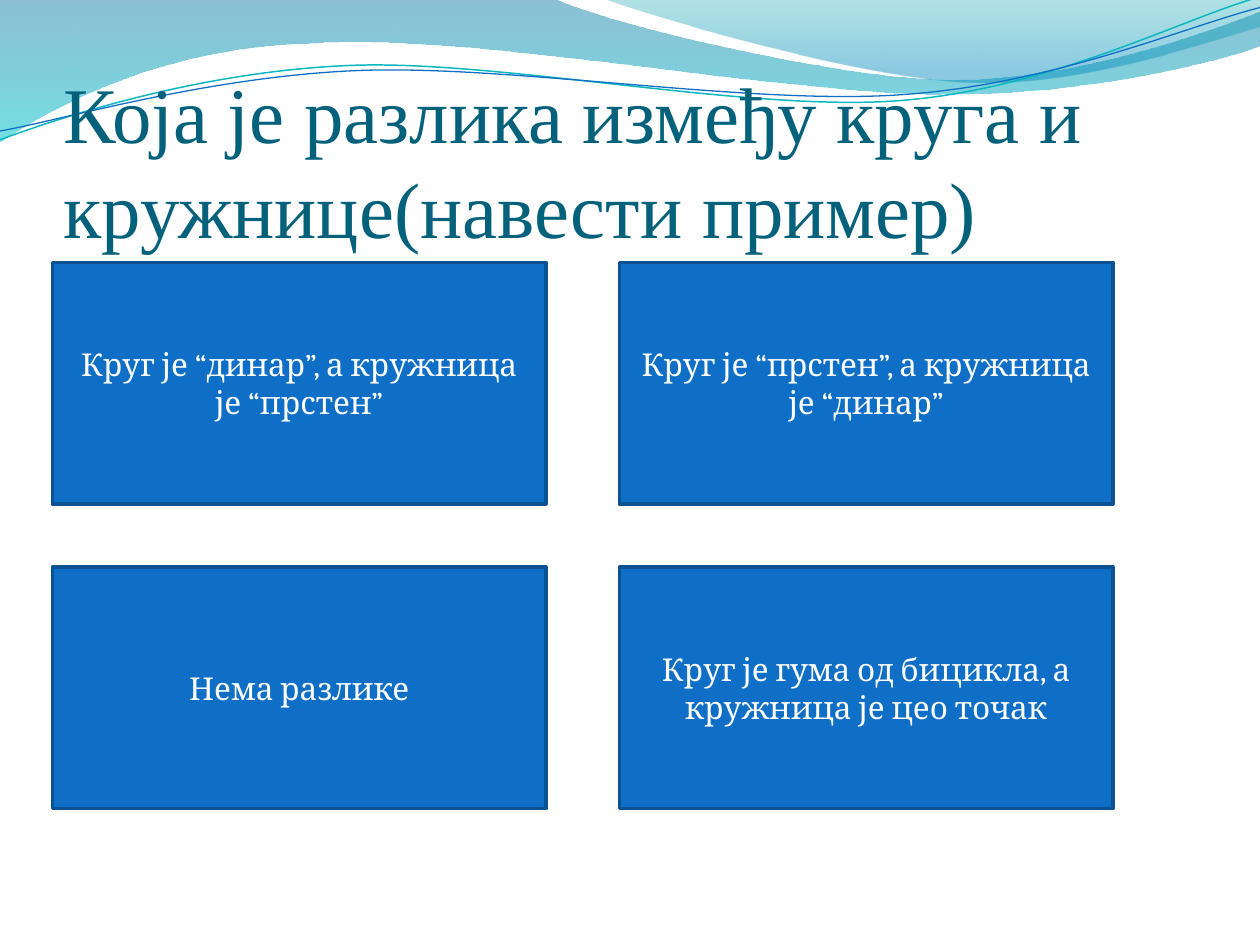
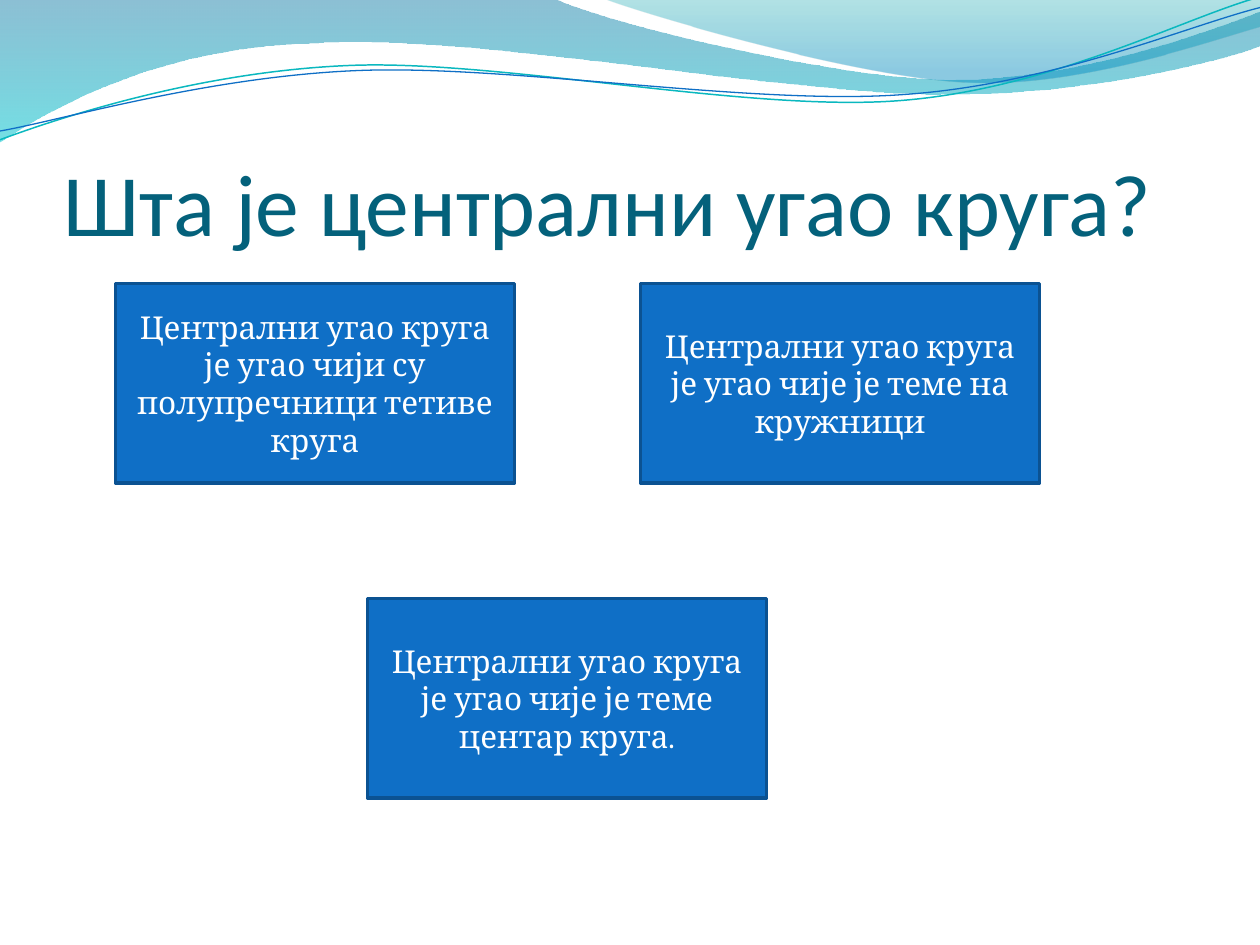
import pptx
import pptx.dml.color
import pptx.enum.shapes
import pptx.enum.text
import pptx.oxml
import pptx.oxml.ns
import pptx.util

Pt = pptx.util.Pt
RGBColor = pptx.dml.color.RGBColor
ALIGN = pptx.enum.text.PP_ALIGN
ANCHOR = pptx.enum.text.MSO_ANCHOR
qn = pptx.oxml.ns.qn
A_NAMESPACE = pptx.oxml.ns.nsdecls("a")

TITLE_TEAL = RGBColor(0x04, 0x61, 0x7B)
CARD_BLUE = RGBColor(0x0F, 0x6F, 0xC6)
CARD_EDGE = RGBColor(0x0B, 0x52, 0x92)
WHITE = RGBColor(0xFF, 0xFF, 0xFF)
WAVE_BLUE = RGBColor(0x00, 0x74, 0xA1)
WAVE_TURQUOISE = RGBColor(0x00, 0xC6, 0xCF)
CREST_GREEN = RGBColor(0x00, 0xA1, 0xA9)
CREST_BLUE = RGBColor(0x00, 0x8B, 0xBF)
STRAND_TEAL = RGBColor(0x0A, 0xB8, 0xBF)

SLIDE_BOX = (0, 0, 720, 540)
TITLE_BOX = (36.3, 55.2, 654, 90)
STRAND_ROTATION = 357.3

# Outlines in points: a pair is a line to a point, six numbers are a Bezier curve.
WAVE = [
    (0, 0), (316.8, -0.7),
    (342.7, 12.2, 478.1, 45.4, 545.8, 45.4),
    (614.2, 45.4, 689.8, 18.7, 720, 6.5),
    (720.7, 25.9),
    (707.8, 31.7, 626.4, 54.7, 537.1, 54),
    (447.8, 54, 275, 20.2, 185, 24.5),
    (92.9, 25.9, 33.1, 59.8, -0.7, 81.4),
    (0, 0),
]
CREST = [
    (344.9, -0.7),
    (366.5, 7.9, 491, 44.6, 553.7, 46.8),
    (616.3, 49.7, 691.9, 23, 720, 15.1),
    (720, 0), (344.9, -0.7),
]
# The strands are given as they lie before their rotation.
TEAL_STRAND = [
    (-1.4, 62.9),
    (33.8, 51.7, 114.1, 29.4, 199.8, 29.9),
    (284.8, 30.3, 425.9, 67.3, 512.5, 64.8),
    (599.1, 62.4, 676.5, 25.7, 720.2, 15.6),
]
BLUE_STRAND = [
    (-1.1, 57.9),
    (32.9, 53.7, 118.3, 32.5, 204.1, 33),
    (290.6, 33.4, 428.9, 63.8, 515.5, 61.4),
    (601.4, 59.6, 678.4, 30.1, 721.4, 21.3),
]


def draw_outline(slide, box, outline, close):
    """Draw a freeform through all points, then join each control triple to a curve."""
    left, top = box[:2]
    points = [(Pt(left + x), Pt(top + y))
              for segment in outline
              for x, y in zip(segment[::2], segment[1::2])]
    builder = slide.shapes.build_freeform(*points[0])
    builder.add_line_segments(points[1:], close=close)
    shape = builder.convert_to_shape()
    shape.shadow.inherit = False

    lines = iter(list(shape._element.iter(qn("a:lnTo"))))
    for segment in outline[1:]:
        line = next(lines)
        if len(segment) == 6:
            curve = pptx.oxml.parse_xml(f"<a:cubicBezTo {A_NAMESPACE}/>")
            line.addprevious(curve)
            for control in (line, next(lines), next(lines)):
                curve.append(control[0])
                control.getparent().remove(control)
    return shape


def draw_gradient_area(slide, box, outline, stops):
    """Fill an outline from top to bottom; a stop is (position, colour, opacity %)."""
    area = draw_outline(slide, box, outline, close=True)
    area.line.fill.background()
    area.fill.gradient()
    area.fill.gradient_angle = 270
    for gradient_stop, (position, color, _) in zip(area.fill.gradient_stops, stops):
        gradient_stop.position = position
        gradient_stop.color.rgb = color
    colors = area._element.spPr.iter(qn("a:srgbClr"))
    for color_element, (_, _, opacity) in zip(colors, stops):
        color_element.append(pptx.oxml.parse_xml(
            f'<a:alpha {A_NAMESPACE} val="{opacity * 1000}"/>'))


def draw_strand(slide, box, outline, color, width):
    strand = draw_outline(slide, box, outline, close=False)
    strand.rotation = STRAND_ROTATION
    strand.fill.background()
    strand.line.color.rgb = color
    strand.line.width = Pt(width)


def draw_waves(slide, box):
    draw_gradient_area(slide, box, WAVE, [(0, WAVE_BLUE, 45), (1, WAVE_TURQUOISE, 55)])
    draw_gradient_area(slide, box, CREST, [(0, CREST_GREEN, 30), (0.8, CREST_BLUE, 45)])
    draw_strand(slide, box, TEAL_STRAND, STRAND_TEAL, 0.85)
    draw_strand(slide, box, BLUE_STRAND, CARD_BLUE, 0.75)


def write_text(shape, text, *, font, size, color, align=ALIGN.LEFT,
               anchor=ANCHOR.MIDDLE, insets=(7.2, 3.6, 7.2, 3.6)):
    frame = shape.text_frame
    frame.word_wrap = True
    frame.vertical_anchor = anchor
    (frame.margin_left, frame.margin_top,
     frame.margin_right, frame.margin_bottom) = map(Pt, insets)
    paragraph = frame.paragraphs[0]
    paragraph.alignment = align
    run = paragraph.add_run()
    run.text = text
    run.font.name = font
    run.font.size = Pt(size)
    run.font.color.rgb = color


def draw_title(slide, box, question, font, size):
    title = slide.shapes.add_textbox(*map(Pt, box))
    write_text(title, question, font=font, size=size, color=TITLE_TEAL,
               anchor=ANCHOR.BOTTOM, insets=(0, 3.6, 0, 0))


def draw_answer(slide, box, answer):
    card = slide.shapes.add_shape(pptx.enum.shapes.MSO_SHAPE.RECTANGLE, *map(Pt, box))
    card.shadow.inherit = False
    card.fill.solid()
    card.fill.fore_color.rgb = CARD_BLUE
    card.line.color.rgb = CARD_EDGE
    card.line.width = Pt(2)
    write_text(card, answer, font="Cambria", size=18, color=WHITE, align=ALIGN.CENTER)


def draw_answer_grid(slide, box, answers, columns=2, gap=(42, 36)):
    """Share the box equally among the answers, row by row."""
    left, top, width, height = box
    rows = len(answers) // columns
    card_width = (width - gap[0] * (columns - 1)) / columns
    card_height = (height - gap[1] * (rows - 1)) / rows
    for index, answer in enumerate(answers):
        row, column = divmod(index, columns)
        draw_answer(slide, (left + column * (card_width + gap[0]),
                            top + row * (card_height + gap[1]),
                            card_width, card_height), answer)


def draw_answer_triangle(slide, box, answers, card_width=228, card_height=114):
    """Two answers in the upper corners and one below, near the middle."""
    left, top, width, height = box
    corners = [(0, 0), (width - card_width, 0), (144, height - card_height)]
    for (x, y), answer in zip(corners, answers):
        draw_answer(slide, (left + x, top + y, card_width, card_height), answer)


def add_question_slide(deck, question, font, size):
    slide = deck.slides.add_slide(deck.slide_layouts[6])
    draw_waves(slide, SLIDE_BOX)
    draw_title(slide, TITLE_BOX, question, font, size)
    return slide


def main():
    deck = pptx.Presentation()
    deck.slide_width, deck.slide_height = map(Pt, SLIDE_BOX[2:])

    circle_and_disc = add_question_slide(
        deck, "Која је разлика између круга и кружнице(навести пример)",
        "Times New Roman", 45)
    draw_answer_grid(circle_and_disc, (30, 150, 606, 312), [
        "Круг је “динар”, а кружница је “прстен”",
        "Круг је “прстен”, а кружница је “динар”",
        "Нема разлике",
        "Круг је гума од бицикла, а кружница је цео точак",
    ])

    central_angle = add_question_slide(
        deck, "Шта је централни угао круга?", "Calibri", 50)
    draw_answer_triangle(central_angle, (66, 162, 528, 294), [
        "Централни угао круга је угао чији су полупречници тетиве круга",
        "Централни угао круга је угао чије је теме на кружници",
        "Централни угао круга је угао чије је теме центар круга.",
    ])

    deck.save("out.pptx")


if __name__ == "__main__":
    main()
